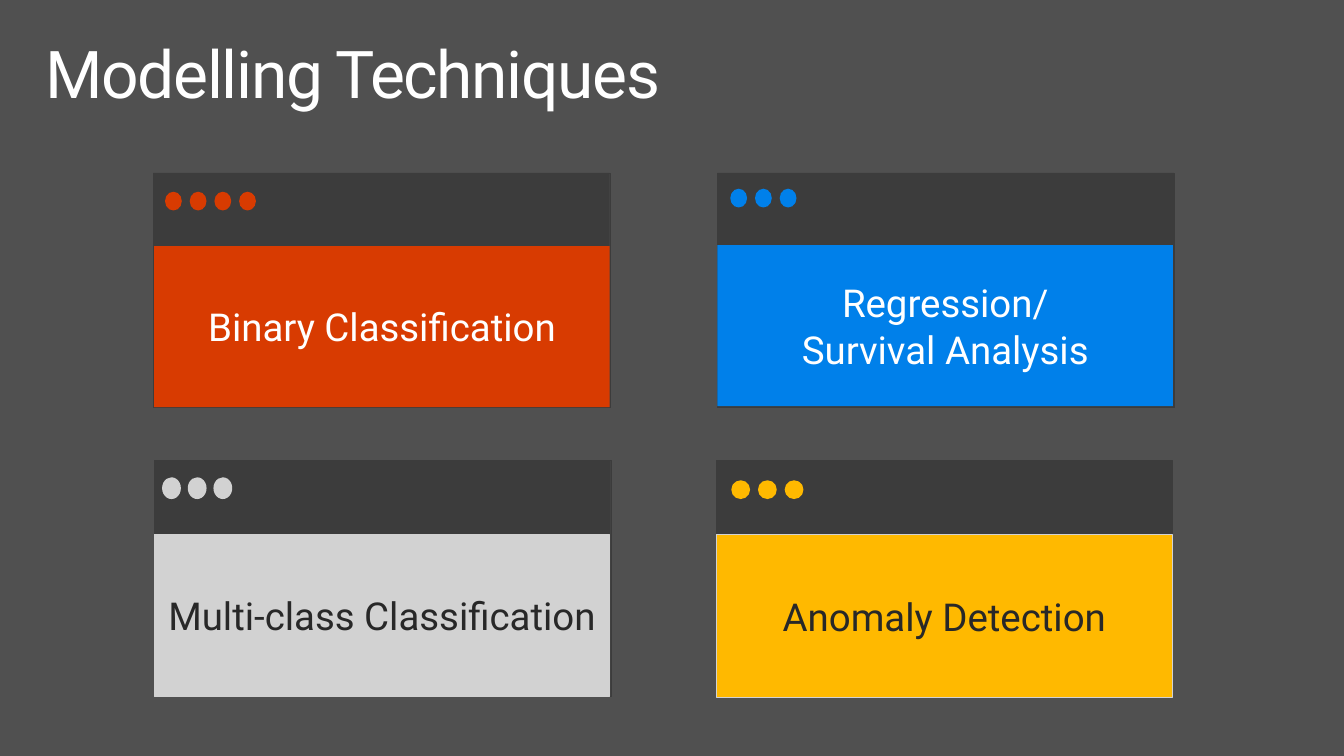
"""Build the Modelling Techniques slide with four window-style cards."""
from pptx import Presentation
from pptx import util as u
from pptx.dml.color import RGBColor
from pptx.enum import shapes, text

BACKDROP = RGBColor(0x50, 0x50, 0x50)
FRAME = RGBColor(0x3C, 0x3C, 0x3C)
WHITE = RGBColor(0xFF, 0xFF, 0xFF)
INK = RGBColor(0x28, 0x28, 0x28)
RED = RGBColor(0xD8, 0x3B, 0x01)
BLUE = RGBColor(0x00, 0x80, 0xEA)
GREY = RGBColor(0xD2, 0xD2, 0xD2)
YELLOW = RGBColor(0xFF, 0xB9, 0x00)

PX = 9144


def px(*lengths):
    return [u.Emu(length * PX) for length in lengths]


class Deck:
    font = "Roboto"
    title_size = 48
    label_size = 28

    def __init__(self, width, height):
        self.prs = Presentation()
        self.prs.slide_width, self.prs.slide_height = px(width, height)
        self.slide = self.prs.slides.add_slide(self.prs.slide_layouts[5])
        backdrop = self.slide.background.fill
        backdrop.solid()
        backdrop.fore_color.rgb = BACKDROP

    def set_text(self, frame, wording, size, color, align):
        frame.text = wording
        frame.word_wrap = True
        for paragraph in frame.paragraphs:
            paragraph.alignment = align
            for run in paragraph.runs:
                run.font.name = self.font
                run.font.size = u.Pt(size)
                run.font.color.rgb = color

    def title(self, wording, box):
        heading = self.slide.shapes.title
        heading.left, heading.top, heading.width, heading.height = px(*box)
        frame = heading.text_frame
        frame.auto_size = text.MSO_AUTO_SIZE.NONE
        frame.vertical_anchor = text.MSO_ANCHOR.TOP
        frame.margin_left, frame.margin_right = px(16, 16)
        frame.margin_top, frame.margin_bottom = px(10, 10)
        self.set_text(frame, wording, self.title_size, WHITE, text.PP_ALIGN.LEFT)
        paragraph = frame.paragraphs[0]
        paragraph.line_spacing = 0.9
        paragraph.runs[0]._r.get_or_add_rPr().set("spc", "-100")

    def block(self, group, kind, box, fill, outline=None):
        part = group.shapes.add_shape(kind, *px(*box))
        part.shadow.inherit = False
        part.fill.solid()
        part.fill.fore_color.rgb = fill
        if outline is None:
            part.line.fill.background()
        else:
            part.line.color.rgb = outline
            part.line.width = u.Pt(0.25)
        return part

    def window(self, wording, frame, panel, dots, fill, ink, outline=None):
        group = self.slide.shapes.add_group_shape()
        rectangle = shapes.MSO_SHAPE.RECTANGLE
        self.block(group, rectangle, frame, FRAME, FRAME)
        label = self.block(group, rectangle, panel, fill, outline).text_frame
        label.vertical_anchor = text.MSO_ANCHOR.MIDDLE
        self.set_text(label, wording, self.label_size, ink, text.PP_ALIGN.CENTER)
        count, left, top, width, height, pitch = dots
        for index in range(count):
            box = (left + index * pitch, top, width, height)
            self.block(group, shapes.MSO_SHAPE.OVAL, box, fill)


def main():
    deck = Deck(1360, 765)
    deck.title("Modelling Techniques", (30, 32, 1300, 100))
    deck.window("Binary Classification", (155, 175, 462, 237),
                (156, 249, 461, 163), (4, 167, 194, 17, 19, 25), RED, WHITE)
    deck.window("Regression/\nSurvival Analysis", (726, 175, 462, 237),
                (726, 248, 461, 163), (3, 739, 191, 17, 19, 25), BLUE, WHITE)
    deck.window("Multi-class Classification", (156, 466, 462, 239),
                (156, 541, 461, 164), (3, 164, 483, 19, 22, 26), GREY, INK, GREY)
    deck.window("Anomaly Detection", (725, 466, 461, 239),
                (725, 541, 461, 165), (3, 740, 486, 19, 19, 27), YELLOW, INK, GREY)
    deck.prs.save("out.pptx")


if __name__ == "__main__":
    main()
